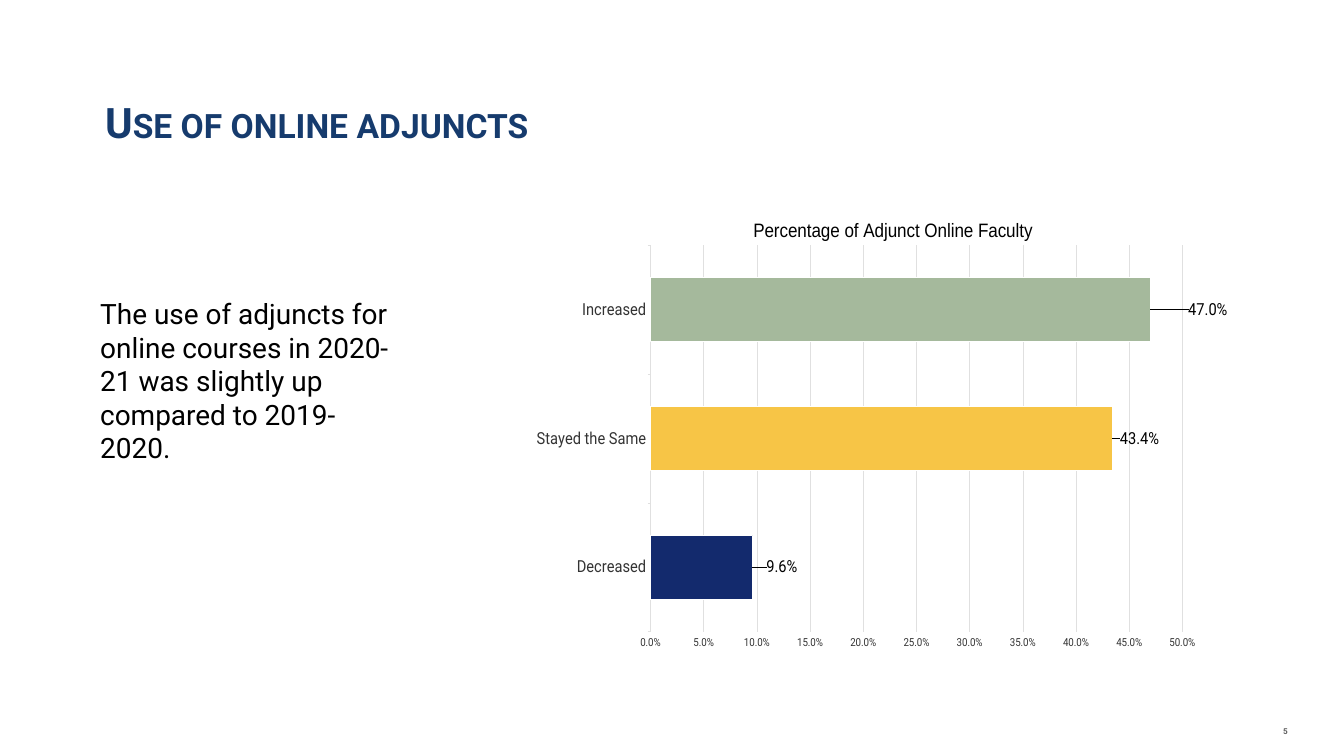
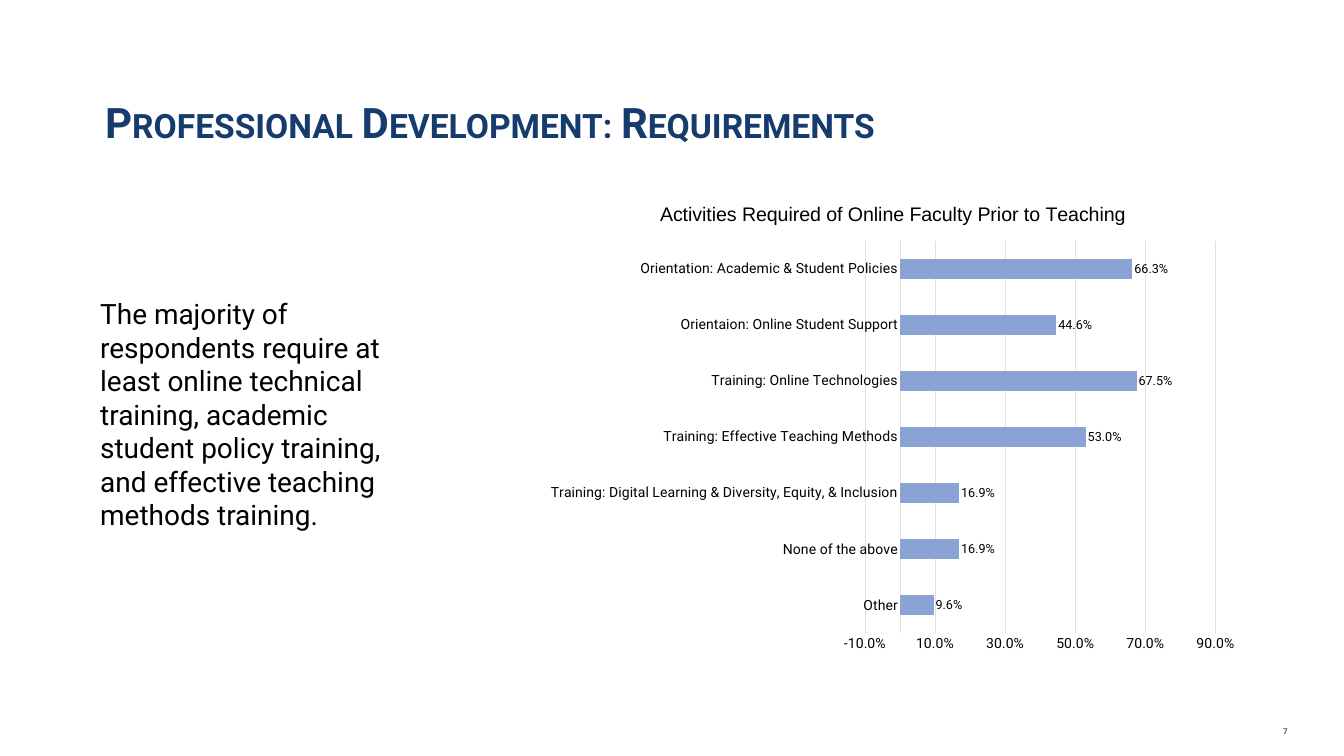
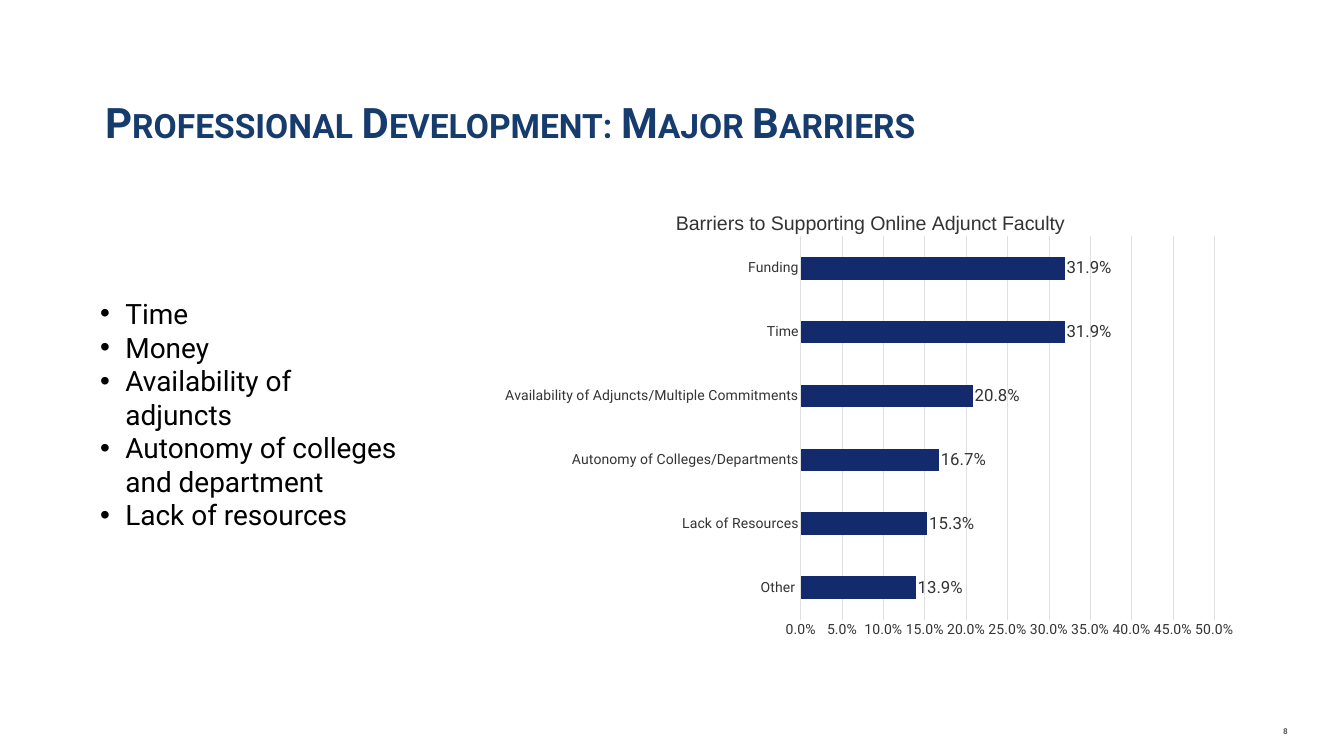
from lxml.etree import SubElement
from pptx import Presentation
from pptx.chart.data import CategoryChartData
from pptx.dml.color import RGBColor
from pptx.enum.chart import XL_CHART_TYPE, XL_LABEL_POSITION, XL_TICK_MARK
from pptx.enum.text import PP_ALIGN
from pptx.oxml import parse_xml
from pptx.util import Cm, Pt

NAVY = "132A6D"
TITLE_BLUE = "163B6D"
BLACK = "000000"
DARK_GRAY = "333333"
NUMBER_GRAY = "5E5E5E"
GRID_GRAY = "E0E0E0"
CHART_NAMESPACE = "http://schemas.openxmlformats.org/drawingml/2006/chart"
PERCENT = "0.0%"


def set_font(font, color, **values):
    font.color.rgb = RGBColor.from_string(color)
    for name, value in ({"name": "Roboto", "bold": False} | values).items():
        setattr(font, name, value)


def add_text(slide, position, lines, color, margins=(0.25, 0.13), bullets=False, **font_values):
    frame = slide.shapes.add_textbox(*[Cm(length) for length in position]).text_frame
    horizontal, vertical = margins
    frame_format = {
        "word_wrap": True,
        "margin_left": Cm(horizontal),
        "margin_right": Cm(horizontal),
        "margin_top": Cm(vertical),
        "margin_bottom": Cm(vertical),
    }
    for name, value in frame_format.items():
        setattr(frame, name, value)
    for index, line in enumerate(lines):
        paragraph = frame.add_paragraph() if index else frame.paragraphs[0]
        if bullets:
            properties = paragraph._p.get_or_add_pPr()
            properties.set("marL", str(Cm(1.27)))
            properties.set("indent", str(-Cm(1.27)))
            bullet_font = SubElement(properties, properties.tag.replace("pPr", "buFont"))
            bullet_font.set("typeface", "Arial")
            SubElement(properties, properties.tag.replace("pPr", "buChar")).set("char", "•")
        run = paragraph.add_run()
        run.text = line
        set_font(run.font, color, **font_values)
    return frame.paragraphs[0]


slides = [
    {
        "number": "5",
        "title": "Use of online adjuncts",
        "body": ["The use of adjuncts for online courses in 2020-21 was slightly up compared to 2019-2020."],
        "position": (27.05, 10.26, 34.82, 22.45),
        "chart_title": "Percentage of Adjunct Online Faculty",
        "series": "",
        "values": {"Decreased": 0.096, "Stayed the Same": 0.434, "Increased": 0.47},
        "bar_color": "00A2FF",
        "point_colors": [NAVY, "F7C546", "A5B99C"],
        "label_offsets": [0.02, 0.01, 0.06],
        "text_color": DARK_GRAY,
        "title_color": BLACK,
        "label_color": BLACK,
        "sizes": {"category": 24, "value": 16, "label": 24},
        "scale": (0, 0.5, 0.05),
        "tick": XL_TICK_MARK.OUTSIDE,
        "gap": 100,
        "plot_area": (0.097, 0.095, 0.884, 0.878),
    },
    {
        "number": "7",
        "title": "Professional Development: Requirements",
        "body": [
            "The majority of respondents require at least online technical training, "
            "academic student policy training, and effective teaching methods training."
        ],
        "position": (27.05, 9.37, 35.89, 23.98),
        "chart_title": "Activities Required of Online Faculty Prior to Teaching",
        "series": "Series 1",
        "values": {
            "Other": 0.096,
            "None of the above": 0.169,
            "Training: Digital Learning & Diversity, Equity, & Inclusion": 0.169,
            "Training: Effective Teaching Methods": 0.53,
            "Training: Online Technologies": 0.675,
            "Orientaion: Online Student Support": 0.446,
            "Orientation: Academic & Student Policies": 0.663,
        },
        "bar_color": "8BA3D4",
        "text_color": BLACK,
        "title_color": BLACK,
        "label_color": BLACK,
        "sizes": {"category": 20, "value": 20, "label": 18},
        "scale": (-0.1, 0.9, 0.2),
        "tick": XL_TICK_MARK.NONE,
        "gap": 182,
    },
    {
        "number": "8",
        "title": "Professional Development: Major Barriers",
        "body": [
            "Time",
            "Money",
            "Availability of adjuncts",
            "Autonomy of colleges and department",
            "Lack of resources",
        ],
        "position": (25.02, 9.86, 37.69, 22.76),
        "chart_title": "Barriers to Supporting Online Adjunct Faculty",
        "series": "Series 1",
        "values": {
            "Other ": 0.139,
            "Lack of Resources": 0.153,
            "Autonomy of Colleges/Departments": 0.167,
            "Availability of Adjuncts/Multiple Commitments": 0.208,
            "Time": 0.319,
            "Funding": 0.319,
        },
        "bar_color": NAVY,
        "text_color": DARK_GRAY,
        "title_color": DARK_GRAY,
        "label_color": DARK_GRAY,
        "sizes": {"category": 20, "value": 20, "label": 24},
        "scale": (0, 0.5, 0.05),
        "tick": XL_TICK_MARK.NONE,
        "gap": 182,
        "plot_area": (0.407, 0.09, 0.553, 0.849),
    },
]

presentation = Presentation()
presentation.slide_width = Cm(67.74)
presentation.slide_height = Cm(38.1)

for content in slides:
    slide = presentation.slides.add_slide(presentation.slide_layouts[6])

    title = add_text(slide, (5.05, 4.75, 57.66, 2.82), [content["title"]], TITLE_BLUE, size=Pt(60), bold=True)
    title.runs[0]._r.get_or_add_rPr().set("cap", "small")

    number = add_text(
        slide, (64.21, 36.35, 1.17, 1.3), [content["number"]], NUMBER_GRAY, (0.15, 0.15), size=Pt(20), bold=True
    )
    number.alignment = PP_ALIGN.CENTER
    number.runs[0]._r.get_or_add_rPr().set("baseline", "30000")

    body = content["body"]
    add_text(slide, (4.8, 14.81, 15.6, 13.41), body, BLACK, bullets=len(body) > 1, size=Pt(40))

    chart_data = CategoryChartData(number_format=PERCENT)
    chart_data.categories = list(content["values"])
    chart_data.add_series(content["series"], list(content["values"].values()))
    position = [Cm(length) for length in content["position"]]
    chart = slide.shapes.add_chart(XL_CHART_TYPE.BAR_CLUSTERED, *position, chart_data).chart
    set_font(chart.font, DARK_GRAY, name="Arial", size=Pt(10))
    chart.has_legend = False
    chart.has_title = True
    chart.chart_title.include_in_layout = False
    chart.chart_title.text_frame.text = content["chart_title"]
    title_run = chart.chart_title.text_frame.paragraphs[0].runs[0]
    set_font(title_run.font, content["title_color"], name="Arial", size=Pt(28))

    sizes = content["sizes"]
    for axis, kind in ((chart.category_axis, "category"), (chart.value_axis, "value")):
        set_font(axis.tick_labels.font, content["text_color"], size=Pt(sizes[kind]))
        axis.major_tick_mark = content["tick"]
        axis.minor_tick_mark = XL_TICK_MARK.NONE
    value_axis = chart.value_axis
    value_axis.minimum_scale, value_axis.maximum_scale, value_axis.major_unit = content["scale"]
    value_axis.tick_labels.number_format = PERCENT
    value_axis.tick_labels.number_format_is_linked = False
    value_axis.format.line.fill.background()
    chart.category_axis.has_major_gridlines = False
    for line in (chart.category_axis.format.line, value_axis.major_gridlines.format.line):
        line.color.rgb = RGBColor.from_string(GRID_GRAY)
        line.width = Pt(0.75)

    plot = chart.plots[0]
    plot.gap_width = content["gap"]
    plot.vary_by_categories = False
    series = plot.series[0]
    series.format.fill.solid()
    series.format.fill.fore_color.rgb = RGBColor.from_string(content["bar_color"])
    labels = series.data_labels
    label_format = {
        "show_value": True,
        "number_format": PERCENT,
        "number_format_is_linked": False,
        "position": XL_LABEL_POSITION.OUTSIDE_END,
    }
    for name, value in label_format.items():
        setattr(labels, name, value)
    set_font(labels.font, content["label_color"], size=Pt(sizes["label"]))

    for index, color in enumerate(content.get("point_colors", [])):
        point = series.points[index]
        point.format.fill.solid()
        point.format.fill.fore_color.rgb = RGBColor.from_string(color)
        point.format.line.color.rgb = RGBColor.from_string("FFFFFF")
        point.format.line.width = Pt(1.5)
        label = point.data_label
        set_font(label.font, content["label_color"], size=Pt(sizes["label"]))
        label.position = XL_LABEL_POSITION.OUTSIDE_END
        label_element = labels._element.findall(f"{{{CHART_NAMESPACE}}}dLbl")[index]
        offset = content["label_offsets"][index]
        label_element.insert(1, parse_xml(
            f'<c:layout xmlns:c="{CHART_NAMESPACE}"><c:manualLayout>'
            f'<c:x val="{offset}"/><c:y val="0"/></c:manualLayout></c:layout>'
        ))
        label_element.insert(2, parse_xml(
            f'<c:numFmt xmlns:c="{CHART_NAMESPACE}" formatCode="{PERCENT}" sourceLinked="0"/>'
        ))
    if "label_offsets" in content:
        labels._element.append(parse_xml(
            f'<c:extLst xmlns:c="{CHART_NAMESPACE}"><c:ext uri="{{CE6537A1-D6FC-4f65-9D91-7224C49458BB}}" '
            'xmlns:c15="http://schemas.microsoft.com/office/drawing/2012/chart">'
            '<c15:showLeaderLines val="1"/></c:ext></c:extLst>'
        ))

    if "plot_area" in content:
        plot_element = chart._chartSpace.chart.plotArea
        for layout in plot_element.findall(f"{{{CHART_NAMESPACE}}}layout"):
            plot_element.remove(layout)
        layout = parse_xml(
            f'<c:layout xmlns:c="{CHART_NAMESPACE}"><c:manualLayout><c:layoutTarget val="inner"/>'
            '<c:xMode val="edge"/><c:yMode val="edge"/></c:manualLayout></c:layout>'
        )
        for name, fraction in zip("xywh", content["plot_area"]):
            SubElement(layout[0], f"{{{CHART_NAMESPACE}}}{name}").set("val", str(fraction))
        plot_element.insert(0, layout)

presentation.save("out.pptx")
